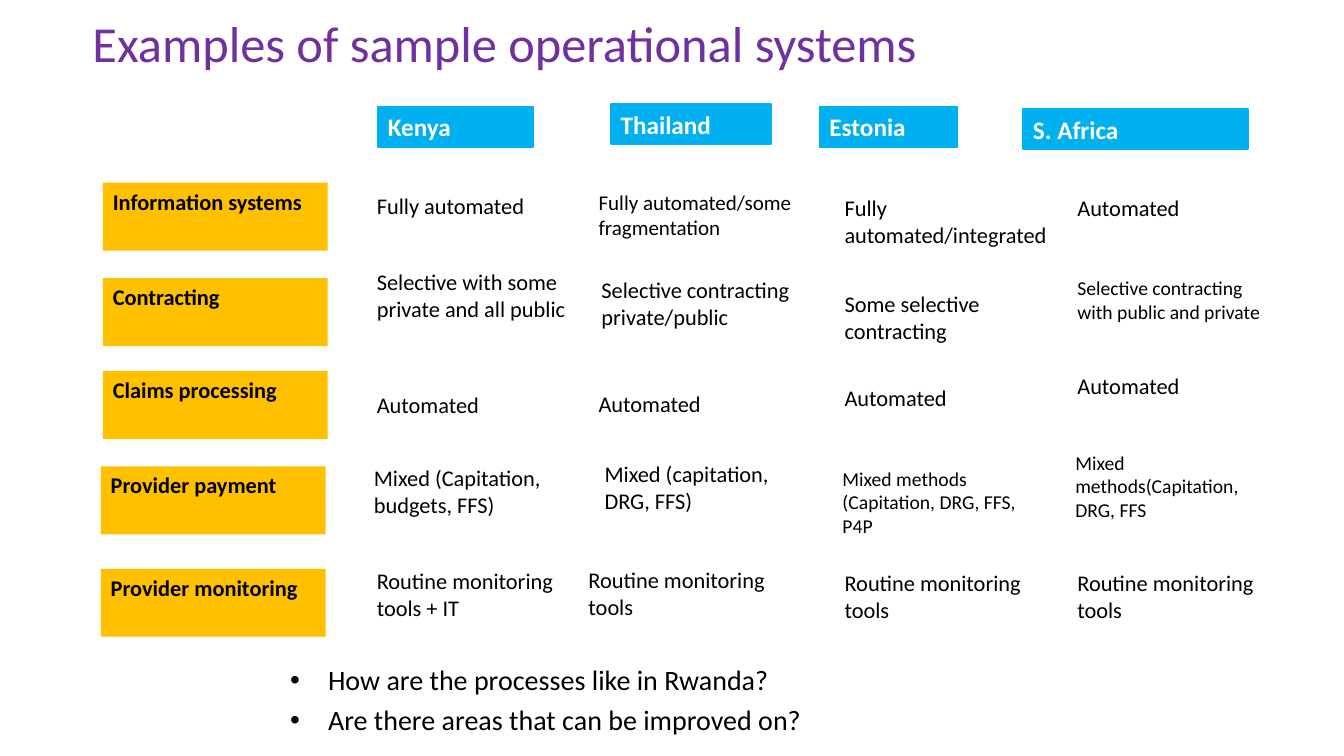
"""Build a slide comparing operational systems in four countries."""
import pptx
import pptx.util
import pptx.dml.color
import pptx.enum.shapes
import pptx.enum.text
import lxml.etree

Pt = pptx.util.Pt


def rgb(value):
    return pptx.dml.color.RGBColor.from_string(value)


def write(shape, lines, size, color, bold=False, anchor="TOP"):
    frame = shape.text_frame
    frame.word_wrap = True
    frame.vertical_anchor = pptx.enum.text.MSO_ANCHOR[anchor]
    frame.text = lines
    font_format = {"name": "Calibri", "size": Pt(size), "bold": bold}
    for paragraph in frame.paragraphs:
        paragraph.alignment = pptx.enum.text.PP_ALIGN.LEFT
        for run in paragraph.runs:
            for key, value in font_format.items():
                setattr(run.font, key, value)
            run.font.color.rgb = rgb(color)
    return frame


deck = pptx.Presentation()
deck.slide_width, deck.slide_height = Pt(960), Pt(540)
slide = deck.slides.add_slide(deck.slide_layouts[6])

title = slide.shapes.add_textbox(Pt(59), Pt(15.8), Pt(741.6), Pt(33.8))
write(title, "Examples of sample operational systems", 36, "7030A0",
      anchor="MIDDLE").paragraphs[0].line_spacing = 0.9

topics = [
    ("Information systems", 73.5, 130.5),
    ("Contracting", 73.5, 198.7),
    ("Claims processing", 73.5, 265),
    ("Provider payment", 72, 333.2),
    ("Provider monitoring", 72, 406.3),
]
countries = [
    ("Kenya", 270, 76.3, 110.9),
    ("Thailand", 436.3, 74.2, 114.5),
    ("Estonia", 585.4, 76.3, 98.6),
    ("S. Africa", 730.8, 77.8, 160.6),
]
labels = [(name, left, top, 160.6, 48.5, 16, "000000", "FFC000")
          for name, left, top in topics]
labels += [(name, left, top, width, 28.8, 18, "FFFFFF", "00B0F0")
           for name, left, top, width in countries]

for name, left, top, width, height, size, color, fill in labels:
    label = slide.shapes.add_shape(pptx.enum.shapes.MSO_SHAPE.RECTANGLE,
                                   Pt(left), Pt(top), Pt(width), Pt(height))
    label.shadow.inherit = False
    label.fill.solid()
    label.fill.fore_color.rgb = rgb(fill)
    if fill == "00B0F0":
        label.line.color.rgb = rgb(fill)
        label.line.width = Pt(1)
    else:
        label.line.fill.background()
    write(label, name, size, color, bold=True)

findings = [
    ("Fully automated", 262.1, 133.9, 160.6, 48.5, 16),
    ("Selective with some private and all public", 262.1, 187.9, 160.6, 69.1, 16),
    ("Automated", 262.1, 275.8, 143.3, 28.1, 16),
    ("Mixed (Capitation, budgets, FFS)", 260, 328.3, 160.6, 69.1, 16),
    ("Routine monitoring tools + IT", 262.1, 401.8, 160.6, 46.1, 16),
    ("Fully automated/some fragmentation", 420.5, 131.8, 165.6, 64.8, 15),
    ("Selective contracting private/public", 422.6, 193.7, 165.6, 69.1, 16),
    ("Automated", 420.5, 275, 160.6, 28.1, 16),
    ("Mixed (capitation, DRG, FFS)", 424.8, 325.4, 160.6, 69.1, 16),
    ("Routine monitoring tools", 413.3, 401, 160.6, 69.1, 16),
    ("Fully automated/integrated", 596.2, 135.4, 160.6, 69.1, 16),
    ("Some selective contracting", 596.2, 203.8, 160.6, 48.2, 16),
    ("Automated", 596.2, 270.7, 160.6, 28.1, 16),
    ("Mixed methods (Capitation, DRG, FFS, P4P", 594.7, 329.8, 160.6, 59, 14),
    ("Routine monitoring tools", 596.2, 403.2, 160.6, 69.1, 16),
    ("Automated", 762.5, 135.4, 160.6, 28.1, 16),
    ("Selective contracting with public and private", 762.5, 193.7, 160.6, 61.2, 14),
    ("Automated", 762.5, 262.1, 160.6, 28.1, 16),
    ("Mixed methods(Capitation, DRG, FFS", 761, 318.2, 160.6, 61.2, 14),
    ("Routine monitoring tools", 762.5, 403.2, 160.6, 69.1, 16),
]
for finding, left, top, width, height, size in findings:
    cell = slide.shapes.add_textbox(Pt(left), Pt(top), Pt(width), Pt(height))
    write(cell, finding, size, "000000")

questions = slide.shapes.add_textbox(Pt(200.2), Pt(472.3), Pt(383), Pt(59))
question_text = write(
    questions,
    "How are the processes like in Rwanda?\nAre there areas that can be improved on?",
    20, "000000")
for question in question_text.paragraphs:
    question.line_spacing = 0.9
    question.space_after = Pt(7)
    properties = question._p.get_or_add_pPr()
    properties.set("marL", str(Pt(27)))
    properties.set("indent", str(Pt(-27)))
    for tag, key, value in (("buFont", "typeface", "Arial"), ("buChar", "char", "•")):
        bullet = lxml.etree.SubElement(properties, pptx.oxml.ns.qn("a:" + tag))
        bullet.set(key, value)

deck.save("out.pptx")
